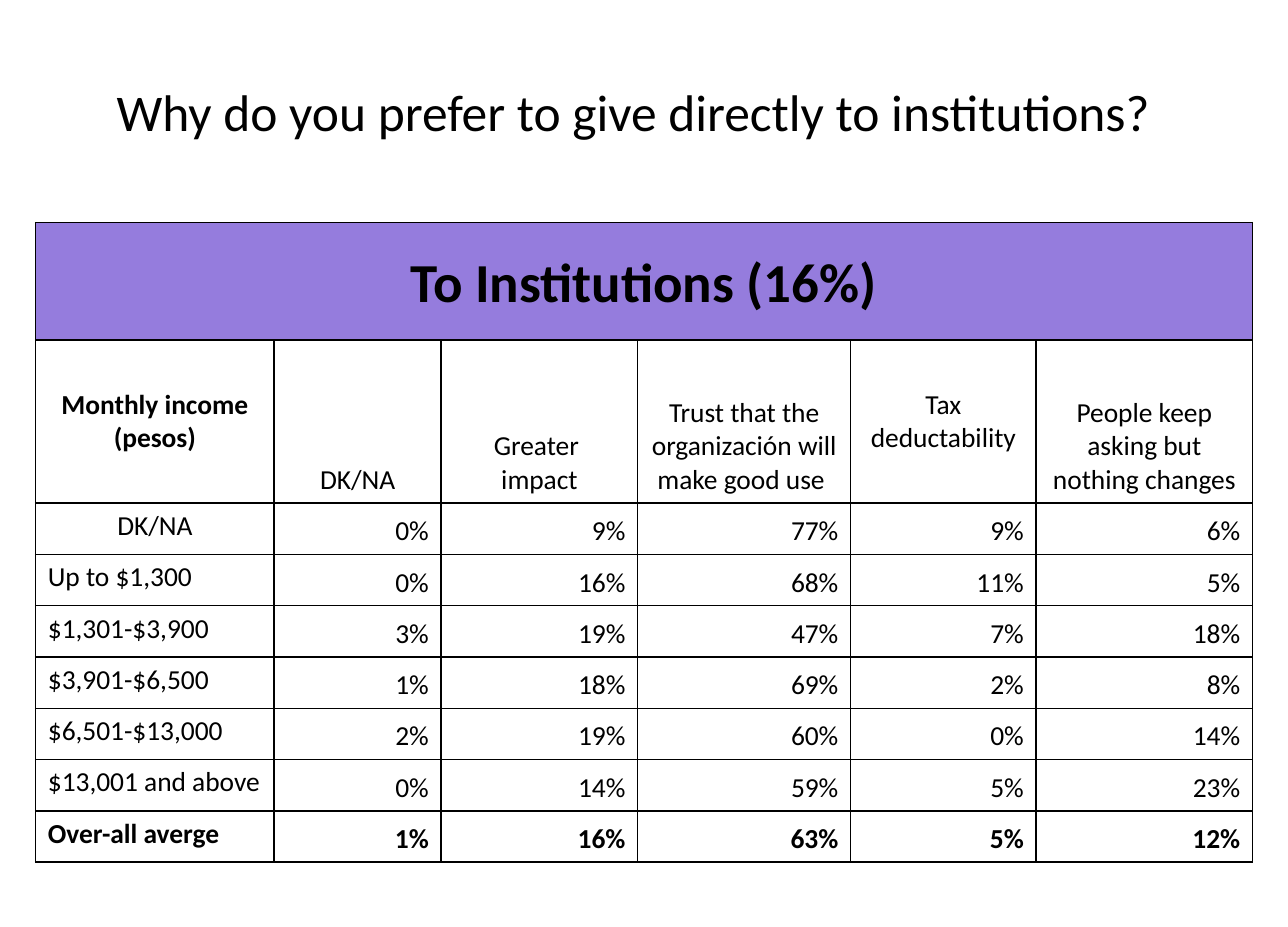
from dataclasses import dataclass

from lxml import etree
from pptx import Presentation
from pptx.dml.color import RGBColor
from pptx.enum.text import MSO_ANCHOR, PP_ALIGN
from pptx.oxml.ns import qn
from pptx.util import Pt

LEFT, CENTER, RIGHT = PP_ALIGN.LEFT, PP_ALIGN.CENTER, PP_ALIGN.RIGHT
TOP, MIDDLE, BOTTOM = MSO_ANCHOR.TOP, MSO_ANCHOR.MIDDLE, MSO_ANCHOR.BOTTOM


@dataclass(frozen=True)
class Theme:
    font: str = "Calibri"
    ink: str = "000000"
    banner: str = "957CDD"
    title_size: int = 30
    banner_size: int = 32
    body_size: int = 16


theme = Theme()


def write(tf, text, size, align, bold=False):
    """Write each line of text as one paragraph."""
    for i, line in enumerate(text.split("\n")):
        p = tf.add_paragraph() if i else tf.paragraphs[0]
        p.alignment = align
        r = p.add_run()
        r.text = line
        r.font.name = theme.font
        r.font.size = Pt(size)
        r.font.bold = bold
        r.font.color.rgb = RGBColor.from_string(theme.ink)


def set_borders(cell, drawn):
    """Draw the named sides of a cell and clear the others."""
    tcPr = cell._tc.get_or_add_tcPr()
    for i, side in enumerate("LRTB"):
        ln = etree.Element(qn(f"a:ln{side}"), w=str(Pt(1)))
        if side in drawn:
            fill = etree.SubElement(ln, qn("a:solidFill"))
            etree.SubElement(fill, qn("a:srgbClr"), val=theme.ink)
        else:
            etree.SubElement(ln, qn("a:noFill"))
        tcPr.insert(i, ln)


prs = Presentation()
prs.slide_width, prs.slide_height = Pt(750), Pt(540)
s = prs.slides.add_slide(prs.slide_layouts[6])

# Title
tf = s.shapes.add_textbox(Pt(26.6), Pt(43.2), Pt(684.7), Pt(90)).text_frame
tf.word_wrap = True
write(tf, "Why do you prefer to give directly to institutions?",
      theme.title_size, CENTER)

# Table content
banner = "To Institutions (16%)"
headers = [
    ("Monthly income (pesos)", MIDDLE),
    ("DK/NA", BOTTOM),
    ("Greater \nimpact", BOTTOM),
    ("Trust that the organización will make good use ", BOTTOM),
    ("Tax deductability", MIDDLE),
    ("People keep asking but nothing changes", BOTTOM),
]
answers = [
    ("DK/NA", 0, 9, 77, 9, 6),
    ("Up to $1,300", 0, 16, 68, 11, 5),
    ("$1,301-$3,900", 3, 19, 47, 7, 18),
    ("$3,901-$6,500", 1, 18, 69, 2, 8),
    ("$6,501-$13,000", 2, 19, 60, 0, 14),
    ("$13,001 and above", 0, 14, 59, 5, 23),
    ("Over-all averge", 1, 16, 63, 5, 12),
]
col_widths = [139, 97.2, 114.5, 124, 108, 126]
row_heights = [29.9, 68.4, 95] + [29.9] * len(answers)

# Table grid
table = s.shapes.add_table(
    len(row_heights), len(col_widths), Pt(20.7), Pt(99.8),
    Pt(sum(col_widths)), Pt(sum(row_heights))).table
table.first_row = table.horz_banding = False
for col, width in zip(table.columns, col_widths):
    col.width = Pt(width)
for row, height in zip(table.rows, row_heights):
    row.height = Pt(height)
for i, row in enumerate(table.rows):
    for cell in row.cells:
        cell.fill.background()
        set_borders(cell, "LRTB" if i else "B")
for i in (0, 1):
    table.cell(i, 0).merge(table.cell(i, len(col_widths) - 1))

# Banner row
cell = table.cell(1, 0)
cell.fill.solid()
cell.fill.fore_color.rgb = RGBColor.from_string(theme.banner)
cell.vertical_anchor = BOTTOM
cell.margin_bottom = Pt(18)
write(cell.text_frame, banner, theme.banner_size, CENTER, bold=True)
cell.text_frame.paragraphs[0].line_spacing = 0.5

# Header row
for j, (text, anchor) in enumerate(headers):
    cell = table.cell(2, j)
    cell.vertical_anchor = anchor
    write(cell.text_frame, text, theme.body_size, CENTER, bold=j == 0)

# Income rows, with the average in bold at the end
for i, (income, *shares) in enumerate(answers):
    bold = i == len(answers) - 1
    cell = table.cell(i + 3, 0)
    cell.vertical_anchor = TOP
    write(cell.text_frame, income, theme.body_size, LEFT if i else CENTER, bold)
    for j, share in enumerate(shares, 1):
        cell = table.cell(i + 3, j)
        cell.vertical_anchor = BOTTOM
        write(cell.text_frame, f"{share}%", theme.body_size, RIGHT, bold)

prs.save("out.pptx")
